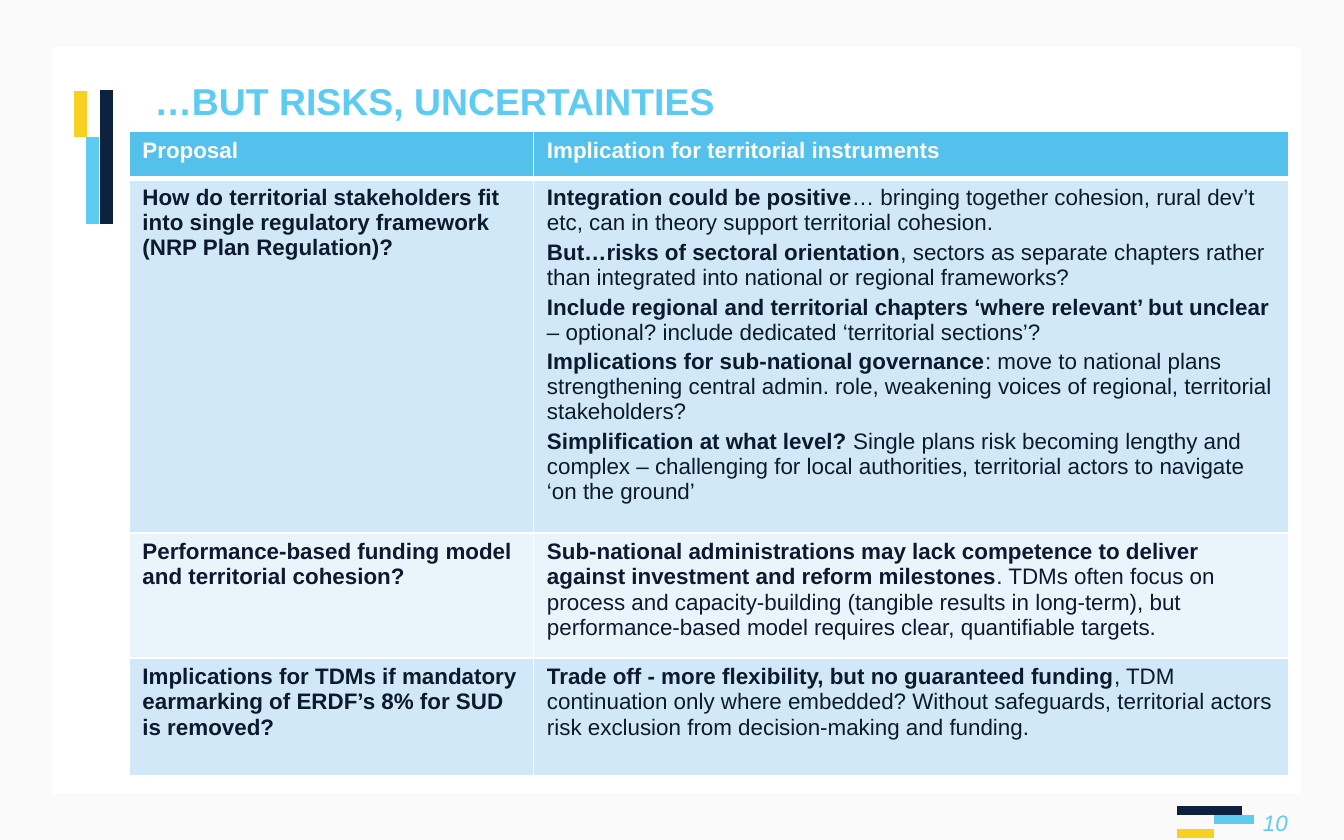
from typing import NamedTuple

from lxml.etree import SubElement
from pptx import Presentation
from pptx.dml.color import RGBColor
from pptx.enum.shapes import MSO_CONNECTOR, MSO_SHAPE
from pptx.enum.text import MSO_ANCHOR, MSO_AUTO_SIZE, PP_ALIGN
from pptx.oxml.ns import qn
from pptx.util import Inches, Pt

FONT = "Arial"
WHITE = RGBColor(0xFF, 0xFF, 0xFF)
FRAME = RGBColor(0xFA, 0xFA, 0xFA)
YELLOW = RGBColor(0xF7, 0xD0, 0x21)
SKY = RGBColor(0x5E, 0xCB, 0xF2)
NAVY = RGBColor(0x0C, 0x22, 0x3F)
INK = RGBColor(0x0C, 0x19, 0x2F)
HEADER = RGBColor(0x54, 0xC0, 0xEC)
BAND_DARK = RGBColor(0xD1, 0xE8, 0xF8)
BAND_LIGHT = RGBColor(0xE9, 0xF4, 0xFB)


class Strip(NamedTuple):
    left: float
    top: float
    width: float
    height: float


class Bar(NamedTuple):
    x1: float
    y1: float
    x2: float
    y2: float
    color: RGBColor
    weight: float


class Point(NamedTuple):
    bold: str
    plain: str = ""


class Row(NamedTuple):
    height: float
    fill: RGBColor
    color: RGBColor
    proposal: Point
    implications: list[Point]
    bottom: float = 1


STRIPS = [
    Strip(0, 5.91, 10, 0.34),
    Strip(9.68, 0, 0.32, 6.15),
    Strip(0, 0, 10, 0.35),
    Strip(0, 0, 0.39, 6.15),
]

BARS = [
    # Beside the title
    Bar(0.6, 0.68, 0.6, 1.02, YELLOW, 7),
    Bar(0.69, 1.02, 0.69, 1.67, SKY, 7),
    Bar(0.79, 0.67, 0.79, 1.67, NAVY, 7),
    # Beside the page number
    Bar(8.76, 6.2, 9.03, 6.2, YELLOW, 5),
    Bar(9.03, 6.1, 9.33, 6.1, SKY, 5),
    Bar(8.76, 6.03, 9.24, 6.03, NAVY, 5),
]

COLUMNS = [3.01, 5.62]
ROWS = [
    Row(0.35, HEADER, WHITE, Point("Proposal"),
        [Point("Implication for territorial instruments")], bottom=3),
    Row(2.58, BAND_DARK, INK,
        Point("How do territorial stakeholders fit into single regulatory framework "
              "(NRP Plan Regulation)?"),
        [Point("Integration could be positive",
               "… bringing together cohesion, rural dev’t etc, can in theory support "
               "territorial cohesion."),
         Point("But…risks of sectoral orientation",
               ", sectors as separate chapters rather than integrated into national or "
               "regional frameworks?"),
         Point("Include regional and territorial chapters ‘where relevant’ but unclear ",
               "– optional? include dedicated ‘territorial sections’?"),
         Point("Implications for sub-national governance",
               ": move to national plans strengthening central admin. role, weakening "
               "voices of regional, territorial stakeholders?"),
         Point("Simplification at what level? ",
               "Single plans risk becoming lengthy and complex – challenging for local "
               "authorities, territorial actors to navigate ‘on the ground’")]),
    Row(0.93, BAND_LIGHT, INK,
        Point("Performance-based funding model and territorial cohesion?"),
        [Point("Sub-national administrations may lack competence to deliver against "
               "investment and reform milestones",
               ". TDMs often focus on process and capacity-building (tangible results in "
               "long-term), but performance-based model requires clear, quantifiable "
               "targets.")]),
    Row(0.88, BAND_DARK, INK,
        Point("Implications for TDMs if mandatory earmarking of ERDF’s 8% for SUD is "
              "removed?"),
        [Point("Trade off - more flexibility, but no guaranteed funding",
               ", TDM continuation only where embedded? Without safeguards, territorial "
               "actors risk exclusion from decision-making and funding.")]),
]


def add_text(p, text: str, *, size=12, color=INK, bold=False, italic=False) -> None:
    r = p.add_run()
    r.text = text
    font = r.font
    font.name, font.size = FONT, Pt(size)
    font.bold, font.italic = bold, italic
    font.color.rgb = color


def add_strip(shapes, strip: Strip) -> None:
    sp = shapes.add_shape(MSO_SHAPE.RECTANGLE, *map(Inches, strip))
    sp.shadow.inherit = False
    sp.fill.solid()
    sp.fill.fore_color.rgb = FRAME
    sp.line.fill.background()


def add_bar(shapes, bar: Bar) -> None:
    line = shapes.add_connector(MSO_CONNECTOR.STRAIGHT, *map(Inches, bar[:4]))
    line.line.color.rgb = bar.color
    line.line.width = Pt(bar.weight)
    SubElement(line._element.spPr, qn("a:effectLst"))


def set_borders(cell, top: float, bottom: float) -> None:
    tc_pr = cell._tc.get_or_add_tcPr()
    weights = {"lnL": 1, "lnR": 1, "lnT": top, "lnB": bottom}
    for i, (side, weight) in enumerate(weights.items()):
        ln = SubElement(tc_pr, qn(f"a:{side}"), w=str(Pt(weight)))
        fill = SubElement(ln, qn("a:solidFill"))
        SubElement(fill, qn("a:srgbClr"), val=str(WHITE))
        tc_pr.insert(i, ln)  # borders come before the fill


def fill_cell(cell, points: list[Point], row: Row, top: float) -> None:
    cell.fill.solid()
    cell.fill.fore_color.rgb = row.fill
    set_borders(cell, top, row.bottom)
    tf = cell.text_frame
    for i, point in enumerate(points):
        p = tf.add_paragraph() if i else tf.paragraphs[0]
        if i:
            p.space_before = Pt(2.4)
        add_text(p, point.bold, color=row.color, bold=True)
        if point.plain:
            add_text(p, point.plain, color=row.color)


def add_risk_table(shapes) -> None:
    height = sum(row.height for row in ROWS)
    frame = shapes.add_table(len(ROWS), len(COLUMNS), Inches(0.96), Inches(0.98),
                             Inches(sum(COLUMNS)), Inches(height))
    table = frame.table
    for column, width in zip(table.columns, COLUMNS):
        column.width = Inches(width)
    top = 1
    for i, row in enumerate(ROWS):
        table.rows[i].height = Inches(row.height)
        fill_cell(table.cell(i, 0), [row.proposal], row, top)
        fill_cell(table.cell(i, 1), row.implications, row, top)
        top = row.bottom


def main() -> None:
    prs = Presentation()
    prs.slide_width, prs.slide_height = Inches(10), Inches(6.25)
    slide = prs.slides.add_slide(prs.slide_layouts[5])
    shapes = slide.shapes

    # Frame and accent bars
    for strip in STRIPS:
        add_strip(shapes, strip)
    for bar in BARS:
        add_bar(shapes, bar)

    # Title
    title = shapes.title
    title.left, title.top = Inches(1.05), Inches(0.53)
    title.width, title.height = Inches(8.62), Inches(0.83)
    tf = title.text_frame
    tf.auto_size = MSO_AUTO_SIZE.NONE
    tf.vertical_anchor = MSO_ANCHOR.TOP
    p = tf.paragraphs[0]
    p.alignment = PP_ALIGN.LEFT
    add_text(p, "…BUT RISKS, UNCERTAINTIES", size=20, color=SKY, bold=True)

    # Page number
    number = shapes.add_textbox(Inches(9.03), Inches(5.96), Inches(0.65), Inches(0.32))
    tf = number.text_frame
    tf.word_wrap = True
    tf.vertical_anchor = MSO_ANCHOR.MIDDLE
    p = tf.paragraphs[0]
    p.alignment = PP_ALIGN.RIGHT
    add_text(p, "10", color=SKY, italic=True)

    add_risk_table(shapes)
    prs.save("out.pptx")


if __name__ == "__main__":
    main()
